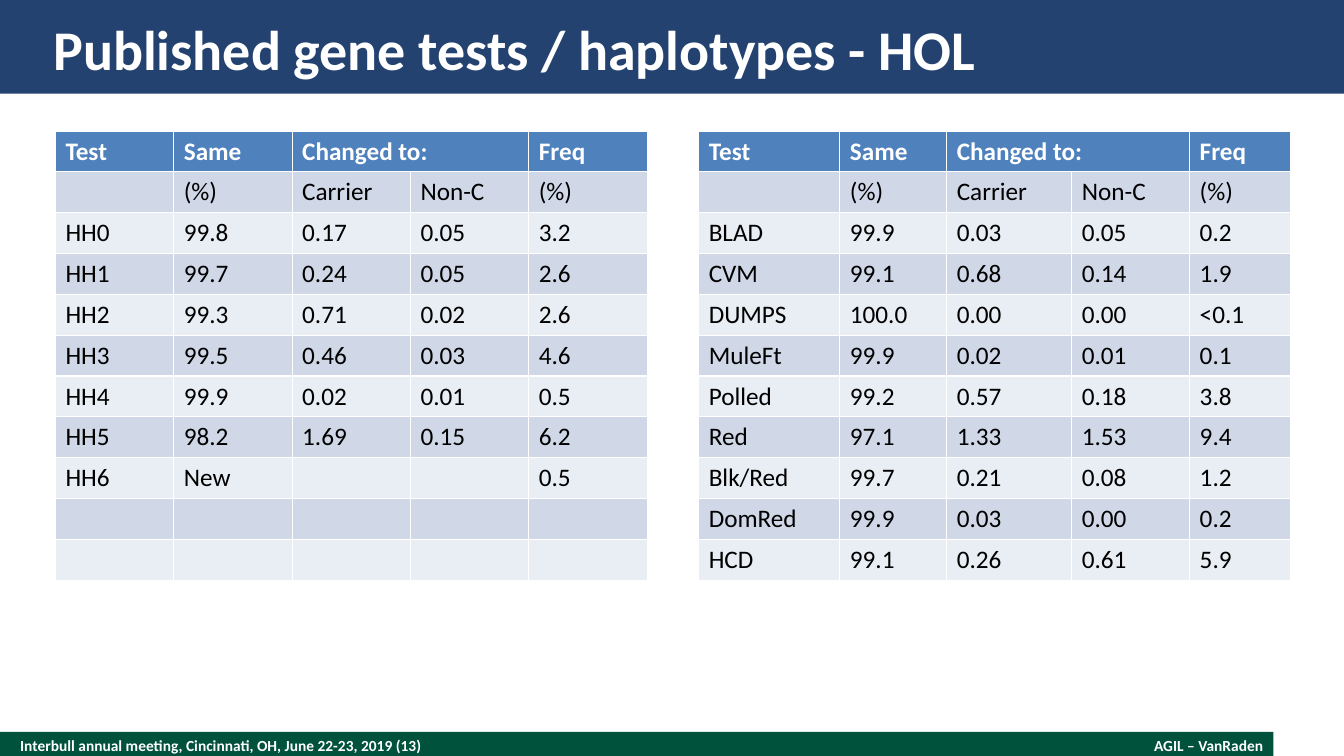
from pptx import Presentation
from pptx.dml.color import RGBColor
from pptx.enum.shapes import MSO_SHAPE
from pptx.enum.text import MSO_ANCHOR, PP_ALIGN
from pptx.util import Inches, Pt

WIDTH, HEIGHT = 13.33, 7.5
NAVY, GREEN, WHITE, BLACK = "244270", "00523C", "FFFFFF", "000000"
HEADER, BANDS = "4F81BD", ("D0D8E8", "E9EDF4")
TABLE_TOP, TABLE_WIDTH, TABLE_HEIGHT = 1.3, 5.87, 4.46
HEADINGS = [
    ["Test", "Same", "Changed to:", "", "Freq"],
    ["", "(%)", "Carrier", "Non-C", "(%)"],
]
HAPLOTYPES = [
    ["HH0", "99.8", "0.17", "0.05", "3.2"],
    ["HH1", "99.7", "0.24", "0.05", "2.6"],
    ["HH2", "99.3", "0.71", "0.02", "2.6"],
    ["HH3", "99.5", "0.46", "0.03", "4.6"],
    ["HH4", "99.9", "0.02", "0.01", "0.5"],
    ["HH5", "98.2", "1.69", "0.15", "6.2"],
    ["HH6", "New", "", "", "0.5"],
    [""] * 5,
    [""] * 5,
]
GENE_TESTS = [
    ["BLAD", "99.9", "0.03", "0.05", "0.2"],
    ["CVM", "99.1", "0.68", "0.14", "1.9"],
    ["DUMPS", "100.0", "0.00", "0.00", "<0.1"],
    ["MuleFt", "99.9", "0.02", "0.01", "0.1"],
    ["Polled", "99.2", "0.57", "0.18", "3.8"],
    ["Red", "97.1", "1.33", "1.53", "9.4"],
    ["Blk/Red", "99.7", "0.21", "0.08", "1.2"],
    ["DomRed", "99.9", "0.03", "0.00", "0.2"],
    ["HCD", "99.1", "0.26", "0.61", "5.9"],
]


def paint(target, color):
    """Fill a shape or a table cell with a hex colour."""
    target.fill.solid()
    target.fill.fore_color.rgb = RGBColor.from_string(color)


def style(p, size, color, bold):
    p.font.name, p.font.size, p.font.bold = "Calibri", Pt(size), bold
    p.font.color.rgb = RGBColor.from_string(color)


def add_bar(s, x, y, w, h, color):
    sp = s.shapes.add_shape(MSO_SHAPE.RECTANGLE, *map(Inches, (x, y, w, h)))
    sp.shadow.inherit = False
    paint(sp, color)
    sp.line.fill.background()


def add_label(s, x, y, w, h, text, size, align=PP_ALIGN.LEFT):
    """Add bold white text, centred vertically in a box without margins."""
    tf = s.shapes.add_textbox(*map(Inches, (x, y, w, h))).text_frame
    tf.word_wrap = True
    tf.vertical_anchor = MSO_ANCHOR.MIDDLE
    tf.margin_left = tf.margin_top = tf.margin_right = tf.margin_bottom = 0
    p = tf.paragraphs[0]
    p.text, p.alignment = text, align
    style(p, size, WHITE, True)


def add_title_band(s, h):
    add_bar(s, 0, 0, WIDTH, h, NAVY)
    add_label(s, 0.53, 0.13, 12.27, 0.7,
              "Published gene tests / haplotypes - HOL", 40)


def add_footer(s, y, w, h):
    add_bar(s, 0, y, w, h, GREEN)
    add_label(s, 0.2, y, 8.67, h,
              "Interbull annual meeting, Cincinnati, OH, June 22-23, 2019 (13)", 11)
    add_label(s, w - 3.03, y, 2.93, h, "AGIL – VanRaden", 11, PP_ALIGN.RIGHT)


def add_test_table(s, x, col_widths, data):
    rows = HEADINGS + data
    table = s.shapes.add_table(
        len(rows), len(col_widths),
        *map(Inches, (x, TABLE_TOP, TABLE_WIDTH, TABLE_HEIGHT))).table
    for column, width in zip(table.columns, col_widths):
        column.width = Inches(width)
    for i, row in enumerate(rows):
        is_header = i == 0
        for j, text in enumerate(row):
            cell = table.cell(i, j)
            paint(cell, HEADER if is_header else BANDS[(i - 1) % 2])
            p = cell.text_frame.paragraphs[0]
            p.text = text
            style(p, 18, WHITE if is_header else BLACK, is_header)
    table.cell(0, 2).merge(table.cell(0, 3))


def main():
    prs = Presentation()
    prs.slide_width, prs.slide_height = Inches(WIDTH), Inches(HEIGHT)
    s = prs.slides.add_slide(prs.slide_layouts[6])
    add_footer(s, 7.26, 12.63, 0.27)
    add_title_band(s, 0.93)
    add_test_table(s, 0.55, [TABLE_WIDTH / 5] * 5, HAPLOTYPES)
    add_test_table(s, 6.93, [1.4, 1.06, 1.24, 1.17, 1], GENE_TESTS)
    prs.save("out.pptx")


if __name__ == "__main__":
    main()
